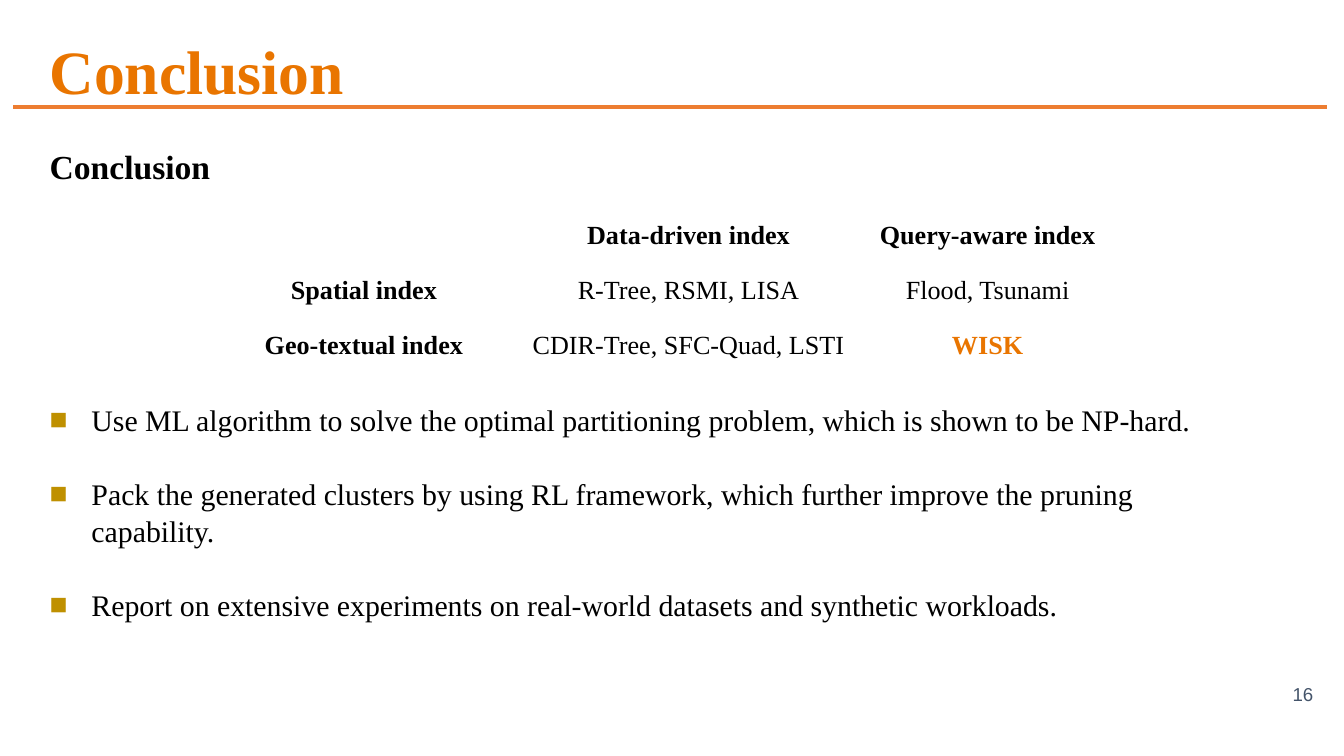
"""Build the conclusion slide with its index table and takeaways."""
from lxml import etree
from pptx import Presentation, util as u
from pptx.dml.color import RGBColor
from pptx.enum import shapes, text
from pptx.oxml.ns import qn

SERIF = "Times New Roman"
ORANGE = "E97500"
TITLE = "Conclusion"
HEADING = "Conclusion"
PAGE = "16"
INDEXES = [
    ("", "Data-driven index", "Query-aware index"),
    ("Spatial index", "R-Tree, RSMI, LISA", "Flood, Tsunami"),
    ("Geo-textual index", "CDIR-Tree, SFC-Quad, LSTI", "WISK"),
]
COLUMN_WIDTHS = (5.64, 6.63, 4.67)
ROW_HEIGHT = 1.04
TAKEAWAYS = [
    "Use ML algorithm to solve the optimal partitioning problem, which is shown to be NP-hard.",
    "Pack the generated clusters by using RL framework, which further improve the pruning capability.",
    "Report on extensive experiments on real-world datasets and synthetic workloads.",
]
TABLE_GAP, BULLET_GAP = 114.5, 19.3


def color(value):
    return RGBColor.from_string(value)


def write(paragraph, content, size=14, font=SERIF, fill="000000", bold=False,
          align=text.PP_ALIGN.LEFT, before=0, spacing=1.0):
    paragraph.alignment = align
    paragraph.space_before = u.Pt(before)
    paragraph.line_spacing = spacing
    run = paragraph.add_run()
    run.text = content
    run.font.size = u.Pt(size)
    run.font.name = font
    run.font.bold = bold
    run.font.color.rgb = color(fill)


def add_box(slide, left, top, width, height, inset=0.25, anchor=text.MSO_ANCHOR.TOP):
    frame = slide.shapes.add_textbox(*map(u.Cm, (left, top, width, height))).text_frame
    frame.word_wrap = True
    frame.vertical_anchor = anchor
    frame.margin_left = frame.margin_right = u.Cm(0.25)
    frame.margin_top = frame.margin_bottom = u.Cm(inset)
    return frame


def add_bullet(paragraph):
    properties = paragraph._p.get_or_add_pPr()
    properties.set("marL", str(u.Cm(0.79)))
    properties.set("indent", str(-u.Cm(0.79)))
    bullet_color = etree.SubElement(properties, qn("a:buClr"))
    etree.SubElement(bullet_color, qn("a:srgbClr"), val="BF9000")
    etree.SubElement(properties, qn("a:buFont"), typeface="Arial")
    etree.SubElement(properties, qn("a:buChar"), char="■")


def add_body(slide):
    frame = add_box(slide, 0.69, 2.59, 23.34, 9.25, inset=0.13)
    write(frame.paragraphs[0], HEADING, size=18, bold=True, spacing=1.05)
    for number, takeaway in enumerate(TAKEAWAYS):
        paragraph = frame.add_paragraph()
        gap = BULLET_GAP if number else TABLE_GAP
        write(paragraph, takeaway, size=16, before=gap, spacing=1.05)
        add_bullet(paragraph)


def add_rule(slide):
    rule = slide.shapes.add_connector(
        shapes.MSO_CONNECTOR.STRAIGHT, *map(u.Cm, (0.25, 2.03, 25.07, 2.03)))
    rule.line.color.rgb = color("ED7D31")
    rule.line.width = u.Pt(2.25)
    etree.SubElement(rule._element.spPr, qn("a:effectLst"))


def add_index_table(slide):
    rows = len(INDEXES)
    table = slide.shapes.add_table(
        rows, len(COLUMN_WIDTHS), u.Cm(4.06), u.Cm(4.06),
        u.Cm(sum(COLUMN_WIDTHS)), u.Cm(rows * ROW_HEIGHT)).table
    table.first_row = table.horz_banding = False
    for column, width in zip(table.columns, COLUMN_WIDTHS):
        column.width = u.Cm(width)
    for row_number, values in enumerate(INDEXES):
        table.rows[row_number].height = u.Cm(ROW_HEIGHT)
        for column_number, value in enumerate(values):
            cell = table.cell(row_number, column_number)
            cell.fill.background()
            highlight = value == "WISK"
            header = row_number == 0 or column_number == 0
            if value:
                write(cell.text_frame.paragraphs[0], value, bold=header or highlight,
                      fill=ORANGE if highlight else "000000", align=text.PP_ALIGN.CENTER)


def main():
    presentation = Presentation()
    presentation.slide_width = u.Cm(25.4)
    presentation.slide_height = u.Cm(14.29)
    slide = presentation.slides.add_slide(presentation.slide_layouts[6])
    page = add_box(slide, 23.55, 12.57, 1.52, 1.09, anchor=text.MSO_ANCHOR.MIDDLE)
    write(page.paragraphs[0], PAGE, size=10, font="Arial", fill="44546A",
          align=text.PP_ALIGN.RIGHT)
    add_body(slide)
    title = add_box(slide, 0.69, 0.38, 23.67, 1.6)
    write(title.paragraphs[0], TITLE, size=33, fill=ORANGE, bold=True)
    add_rule(slide)
    add_index_table(slide)
    presentation.save("out.pptx")


if __name__ == "__main__":
    main()
